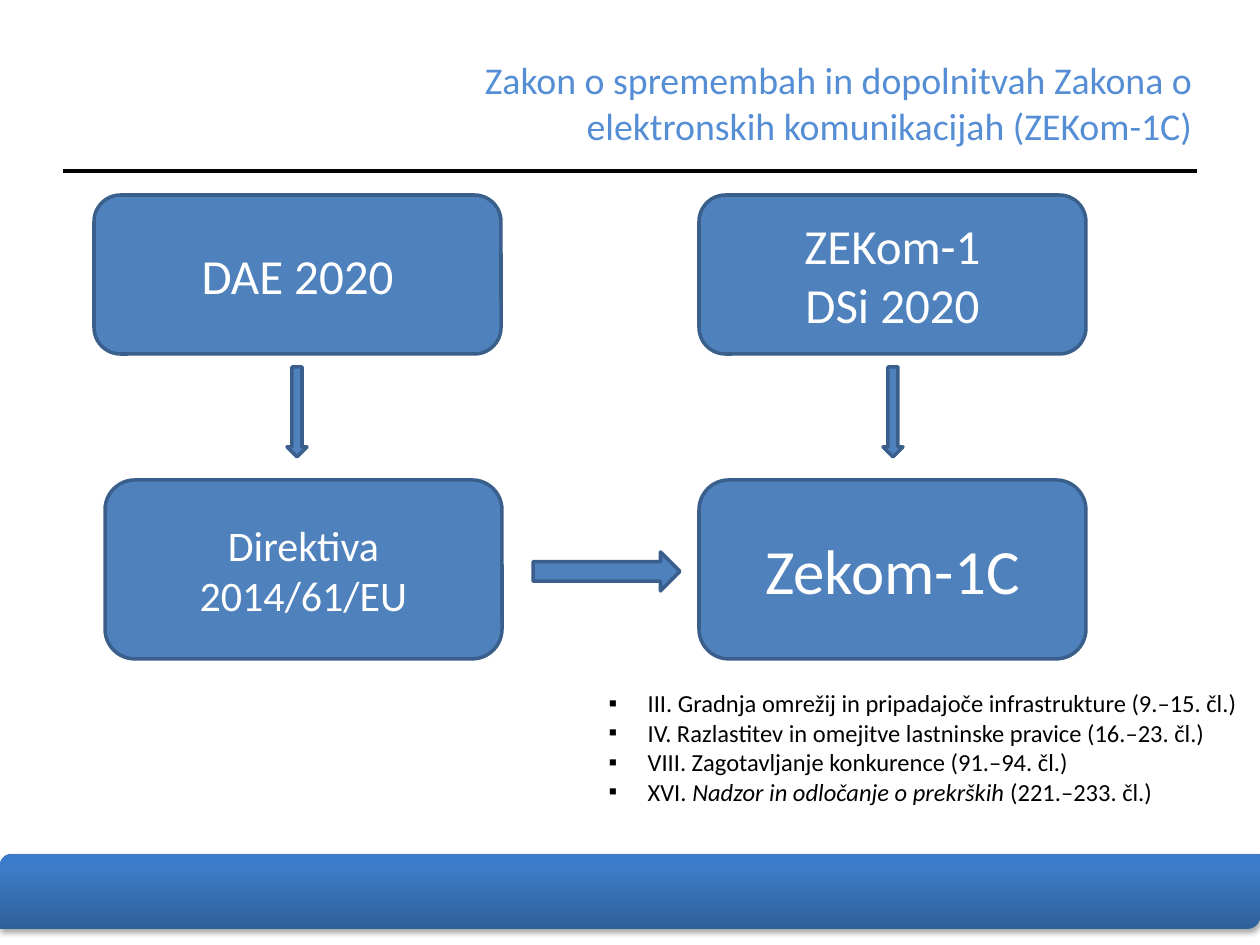
from copy import deepcopy

from lxml import etree
from pptx import Presentation
from pptx.dml.color import RGBColor
from pptx.enum.shapes import MSO_CONNECTOR, MSO_SHAPE
from pptx.enum.text import MSO_ANCHOR, MSO_AUTO_SIZE, PP_ALIGN
from pptx.oxml.ns import qn
from pptx.util import Inches, Pt

STRAIGHT = MSO_CONNECTOR.STRAIGHT
ROUND_RECT = MSO_SHAPE.ROUNDED_RECTANGLE
DIAG_RECT = MSO_SHAPE.ROUND_2_DIAG_RECTANGLE
DOWN, RIGHT_ARROW = MSO_SHAPE.DOWN_ARROW, MSO_SHAPE.RIGHT_ARROW
TOP, MIDDLE = MSO_ANCHOR.TOP, MSO_ANCHOR.MIDDLE
LEFT, CENTER, RIGHT = PP_ALIGN.LEFT, PP_ALIGN.CENTER, PP_ALIGN.RIGHT
NO_FIT = MSO_AUTO_SIZE.NONE

BLACK = RGBColor(0x00, 0x00, 0x00)
WHITE = RGBColor(0xFF, 0xFF, 0xFF)
TITLE_BLUE = RGBColor(0x55, 0x8E, 0xD5)
BOX_BLUE = RGBColor(0x4F, 0x81, 0xBD)
EDGE_BLUE = RGBColor(0x3A, 0x5F, 0x8C)
BAR_STOPS = [(0, RGBColor(0x2F, 0x5F, 0x99)),
             (0.8, RGBColor(0x3D, 0x7C, 0xC7)),
             (1, RGBColor(0x3A, 0x7C, 0xCB))]

SCALE = Inches(1) / 126


def px(n):
    return round(n * SCALE)


def add_text(p, text, size=14, color=BLACK, italic=False, font="Calibri"):
    r = p.add_run()
    r.text = text
    r.font.name = font
    r.font.size = Pt(size)
    r.font.italic = italic
    r.font.color.rgb = color


def set_bullet(p, char, margin, indent):
    pPr = p._p.get_or_add_pPr()
    pPr.set("marL", str(px(margin)))
    pPr.set("indent", str(px(indent)))
    etree.SubElement(pPr, qn("a:buFont")).set("typeface", "Wingdings")
    pPr[-1].set("typeface", "Arial")
    etree.SubElement(pPr, qn("a:buChar")).set("char", char)


def add_shadow(s, blur, dist, alpha):
    """Cast a black shadow straight down; blur and dist are points."""
    s.shadow.inherit = False
    effects = s._element.spPr.find(qn("a:effectLst"))
    shadow = etree.SubElement(effects, qn("a:outerShdw"), blurRad=str(Pt(blur)),
                              dist=str(Pt(dist)), dir="5400000", rotWithShape="0")
    color = etree.SubElement(shadow, qn("a:srgbClr"), val="000000")
    etree.SubElement(color, qn("a:alpha"), val=str(alpha * 1000))


class SlideBuilder:
    def __init__(self, slide, fill=BOX_BLUE, edge=EDGE_BLUE):
        self.slide = slide
        self.fill = fill
        self.edge = edge

    def place(self, s, x, y, w, h):
        s.left, s.top, s.width, s.height = px(x), px(y), px(w), px(h)

    def bar(self, x, y, w, h):
        s = self.slide.shapes.add_shape(DIAG_RECT, px(x), px(y), px(w), px(h))
        s.fill.gradient()
        s.fill.gradient_angle = 90
        stop_list = s._element.spPr.find(qn("a:gradFill")).find(qn("a:gsLst"))
        stop_list.append(deepcopy(stop_list[-1]))
        for stop, (position, color) in zip(s.fill.gradient_stops, BAR_STOPS):
            stop.position = position
            stop.color.rgb = color
        s.line.fill.background()
        add_shadow(s, blur=3.1, dist=1.8, alpha=35)

    def rule(self, x1, y1, x2, y2):
        s = self.slide.shapes.add_connector(STRAIGHT, px(x1), px(y1), px(x2), px(y2))
        s.line.color.rgb = BLACK
        s.line.width = Pt(0)
        etree.SubElement(s._element.spPr, qn("a:effectLst"))

    def title(self, text, x, y, w, h):
        s = self.slide.shapes.title
        self.place(s, x, y, w, h)
        tf = s.text_frame
        tf.auto_size = NO_FIT
        tf.vertical_anchor = MIDDLE
        p = tf.paragraphs[0]
        p.alignment = RIGHT
        add_text(p, text, size=21.6, color=TITLE_BLUE)

    def shape(self, kind, x, y, w, h):
        s = self.slide.shapes.add_shape(kind, px(x), px(y), px(w), px(h))
        s.shadow.inherit = False
        s.fill.solid()
        s.fill.fore_color.rgb = self.fill
        s.line.color.rgb = self.edge
        s.line.width = Pt(2)
        return s

    def box(self, lines, size, x, y, w, h):
        tf = self.shape(ROUND_RECT, x, y, w, h).text_frame
        tf.word_wrap = True
        tf.vertical_anchor = MIDDLE
        for i, line in enumerate(lines):
            p = tf.add_paragraph() if i else tf.paragraphs[0]
            p.alignment = CENTER
            add_text(p, line, size=size, color=WHITE)

    def bullets(self, items, x, y, w, h):
        """Fill the body; each item is a list of (text, italic) pairs."""
        s = self.slide.placeholders[1]
        self.place(s, x, y, w, h)
        tf = s.text_frame
        tf.auto_size = NO_FIT
        tf.vertical_anchor = TOP
        for i, item in enumerate(items):
            p = tf.add_paragraph() if i else tf.paragraphs[0]
            p.level = 1
            set_bullet(p, "▪", margin=102, indent=-39)
            p.alignment = LEFT
            p.space_before = Pt(0)
            for text, italic in item:
                add_text(p, text, italic=italic)


def main():
    prs = Presentation()
    prs.slide_width, prs.slide_height = px(1260), px(945)
    b = SlideBuilder(prs.slides.add_slide(prs.slide_layouts[1]))

    b.bar(0, 854, 1260, 75)
    b.rule(63, 171, 1197, 171)
    b.title("Zakon o spremembah in dopolnitvah Zakona o "
            "elektronskih komunikacijah (ZEKom-1C)", 302, 49, 903, 107)

    top, bottom, right = 195, 480, 699
    b.box(["Direktiva 2014/61/EU"], 24, 105, bottom, 397, 179)
    b.box(["ZEKom-1", "DSi 2020"], 28, right, top, 387, 159)
    b.box(["Zekom-1C"], 36, right, bottom, 387, 179)
    b.box(["DAE 2020"], 28, 94, top, 407, 159)

    b.bullets([
        [("III. Gradnja omrežij in pripadajoče infrastrukture (9.–15. čl.)", False)],
        [("IV. Razlastitev in omejitve lastninske pravice (16.–23. čl.)", False)],
        [("VIII. Zagotavljanje konkurence (91.–94. čl.)", False)],
        [("XVI. ", False), ("Nadzor in odločanje o prekrških ", True),
         ("(221.–233. čl.)", False)],
    ], 533, 682, 719, 131)

    for x in (883, 287):
        b.shape(DOWN, x, 367, 20, 90)
    b.shape(RIGHT_ARROW, 533, 552, 147, 39)

    prs.save("out.pptx")


if __name__ == "__main__":
    main()
